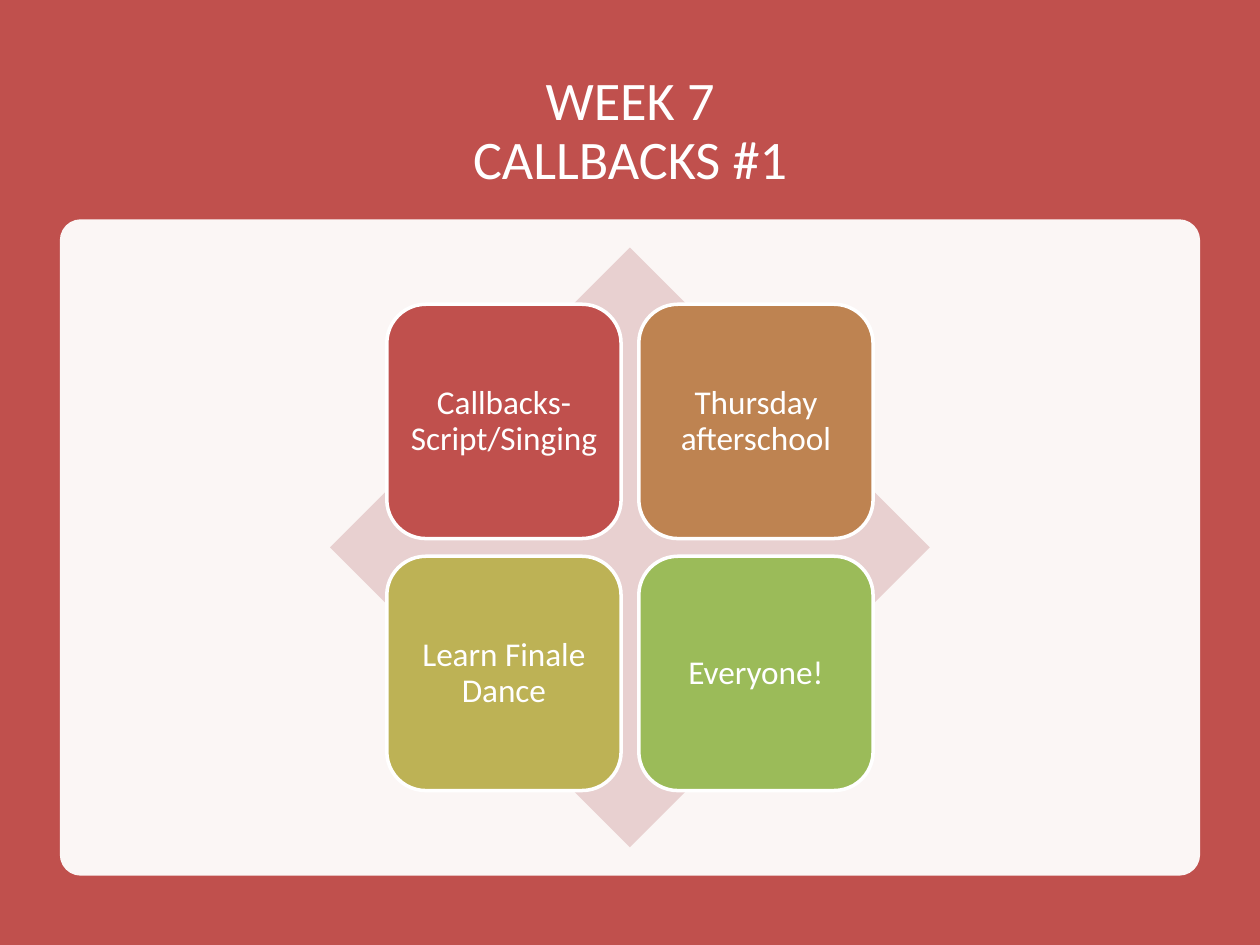
from lxml import etree
from pptx import Presentation, util as u
from pptx.dml.color import RGBColor
from pptx.enum import shapes, text
from pptx.oxml.ns import qn

THEME = {
    "font": "Calibri", "title_size": 31, "tile_size": 19,
    "red": "C0504D", "white": "FFFFFF", "diamond": "E8D0D0",
    "tiles": ["C0504D", "BE8351", "BDB255", "9BBB59"],
}
WIDTH, HEIGHT = 10, 7.5
SHAPE = shapes.MSO_SHAPE


def add_block(parent, kind, left, top, width, height, color):
    shape = parent.add_shape(kind, *map(u.Inches, (left, top, width, height)))
    shape.shadow.inherit = False
    shape.fill.solid()
    shape.fill.fore_color.rgb = RGBColor.from_string(color)
    shape.line.fill.background()
    return shape


def write_text(shape, words, size):
    frame = shape.text_frame
    frame.word_wrap = True
    frame.vertical_anchor = text.MSO_ANCHOR.MIDDLE
    paragraph = frame.paragraphs[0]
    paragraph.text = words
    paragraph.alignment = text.PP_ALIGN.CENTER
    paragraph.line_spacing = 0.9
    paragraph.font.name = THEME["font"]
    paragraph.font.size = u.Pt(size)
    paragraph.font.color.rgb = RGBColor.from_string(THEME["white"])
    return frame


presentation = Presentation()
presentation.slide_width = u.Inches(WIDTH)
presentation.slide_height = u.Inches(HEIGHT)
slide = presentation.slides.add_slide(presentation.slide_layouts[6])

# Red backdrop
add_block(slide.shapes, SHAPE.RECTANGLE, 0, 0, WIDTH, HEIGHT, THEME["red"])

# Title
title_width = 0.862 * WIDTH
title = slide.shapes.add_textbox(*map(
    u.Inches, ((WIDTH - title_width) / 2, 0.5, title_width, 1.1)))
write_text(title, "WEEK 7\vCALLBACKS #1", THEME["title_size"])

# Translucent panel
panel_width, panel_height, panel_top = 9.05, 5.21, 1.74
panel = add_block(slide.shapes, SHAPE.ROUNDED_RECTANGLE, (WIDTH - panel_width) / 2,
                  panel_top, panel_width, panel_height, THEME["white"])
panel.adjustments[0] = 0.032
panel_color = panel.fill._xPr.find(qn("a:solidFill"))[0]
etree.SubElement(panel_color, qn("a:alpha")).set("val", "95000")

# Diamond centred on the panel
matrix = slide.shapes.add_group_shape().shapes
center_x, center_y = WIDTH / 2, panel_top + panel_height / 2
diamond = 4.76
add_block(matrix, SHAPE.DIAMOND, center_x - diamond / 2, center_y - diamond / 2,
          diamond, diamond, THEME["diamond"])

# Two by two grid of tiles around the same centre
tile, pitch = 1.86, 2
labels = ["Callbacks- Script/Singing", "Thursday afterschool",
          "Learn Finale Dance", "Everyone!"]
for index, (label, color) in enumerate(zip(labels, THEME["tiles"])):
    row, column = divmod(index, 2)
    left = center_x + (column - 0.5) * pitch - tile / 2
    top = center_y + (row - 0.5) * pitch - tile / 2
    shape = add_block(matrix, SHAPE.ROUNDED_RECTANGLE, left, top, tile, tile, color)
    shape.line.color.rgb = RGBColor.from_string(THEME["white"])
    shape.line.width = u.Pt(2)
    frame = write_text(shape, label, THEME["tile_size"])
    frame.margin_left = frame.margin_right = u.Inches(0.08)
    frame.margin_top = frame.margin_bottom = u.Inches(0.08)

presentation.save("out.pptx")
